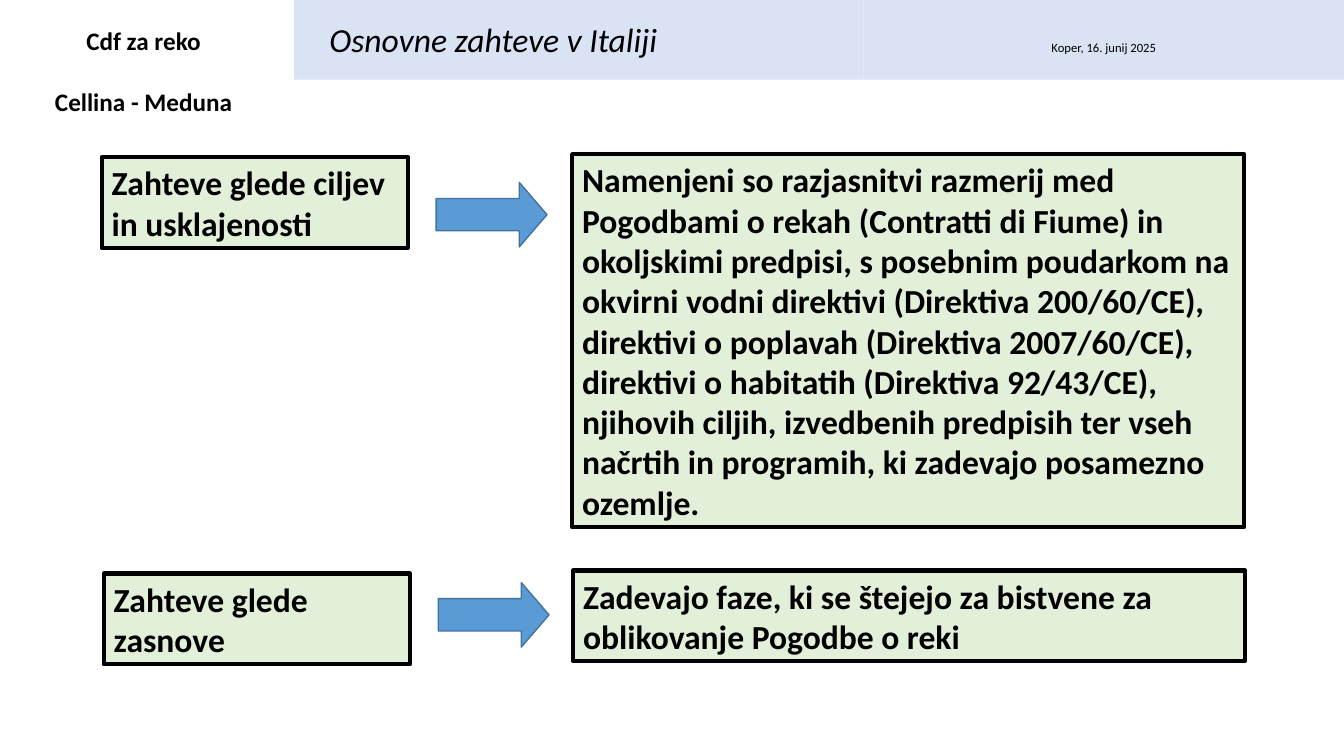
from pptx import Presentation
from pptx.dml.color import RGBColor
from pptx.enum.shapes import MSO_SHAPE
from pptx.enum.text import MSO_ANCHOR, MSO_AUTO_SIZE, PP_ALIGN
from pptx.util import Inches, Pt


def color(hex_code):
    return RGBColor.from_string(hex_code)


def add_text(paragraph, text, size, bold=False, italic=False, align=PP_ALIGN.LEFT):
    paragraph.alignment = align
    run = paragraph.add_run()
    run.text = text
    run.font.name = "Calibri"
    run.font.size = Pt(size)
    run.font.bold = bold
    run.font.italic = italic
    run.font.color.rgb = color("000000")


presentation = Presentation()
presentation.slide_width = Inches(13.34)
presentation.slide_height = Inches(7.5)
slide = presentation.slides.add_slide(presentation.slide_layouts[5])
shapes = slide.shapes

# Header band: title part and date part
for left, width, date in [(2.92, 5.65, ""), (8.57, 4.77, "Koper, 16. junij 2025")]:
    band = shapes.add_shape(MSO_SHAPE.RECTANGLE, Inches(left), 0, Inches(width), Inches(0.79))
    band.shadow.inherit = False
    band.fill.solid()
    band.fill.fore_color.rgb = color("DAE3F3")
    band.line.fill.background()
    if date:
        band.text_frame.margin_top = Inches(0.2)
        add_text(band.text_frame.paragraphs[0], date, 9, align=PP_ALIGN.CENTER)

title = shapes.title
title.left, title.top = Inches(3.17), Inches(0.14)
title.width, title.height = Inches(5.29), Inches(0.5)
title.text_frame.auto_size = MSO_AUTO_SIZE.NONE
title.text_frame.vertical_anchor = MSO_ANCHOR.BOTTOM
add_text(title.text_frame.paragraphs[0], "Osnovne zahteve v Italiji", 24, italic=True)
# Bring the title in front of the band
title.element.getparent().append(title.element)

# Requirements on the left, their explanations on the right
boxes = [
    (1.01, 1.56, 3.04, 0.9, "Zahteve glede ciljev in usklajenosti"),
    (5.68, 1.53, 6.67, 3.7,
     "Namenjeni so razjasnitvi razmerij med Pogodbami o rekah (Contratti di Fiume) "
     "in okoljskimi predpisi, s posebnim poudarkom na okvirni vodni direktivi "
     "(Direktiva 200/60/CE), direktivi o poplavah (Direktiva 2007/60/CE), "
     "direktivi o habitatih (Direktiva 92/43/CE), njihovih ciljih, izvedbenih "
     "predpisih ter vseh načrtih in programih, ki zadevajo posamezno ozemlje."),
    (1.03, 5.69, 3.04, 0.9, "Zahteve glede zasnove"),
    (5.69, 5.66, 6.67, 0.9,
     "Zadevajo faze, ki se štejejo za bistvene za oblikovanje Pogodbe o reki"),
]
for left, top, width, height, text in boxes:
    box = shapes.add_shape(MSO_SHAPE.RECTANGLE, Inches(left), Inches(top),
                           Inches(width), Inches(height))
    box.shadow.inherit = False
    box.fill.solid()
    box.fill.fore_color.rgb = color("E2F0D9")
    box.line.color.rgb = color("000000")
    box.line.width = Pt(3)
    box.text_frame.word_wrap = True
    box.text_frame.vertical_anchor = MSO_ANCHOR.TOP
    add_text(box.text_frame.paragraphs[0], text, 24, bold=True)

for left, top in [(4.33, 1.81), (4.35, 5.78)]:
    arrow = shapes.add_shape(MSO_SHAPE.RIGHT_ARROW, Inches(left), Inches(top),
                             Inches(1.1), Inches(0.64))
    arrow.adjustments[1] = 0.43
    arrow.shadow.inherit = False
    arrow.fill.solid()
    arrow.fill.fore_color.rgb = color("5B9BD5")
    arrow.line.color.rgb = color("43729D")
    arrow.line.width = Pt(1)

river_contract = shapes.add_textbox(Inches(0.42), Inches(0.2), Inches(2.01), Inches(1)).text_frame
river_contract.word_wrap = True
add_text(river_contract.paragraphs[0], "Cdf za reko", 18, bold=True, align=PP_ALIGN.CENTER)
river_names = river_contract.add_paragraph()
river_names.space_before = Pt(21.8)
add_text(river_names, "Cellina - Meduna", 18, bold=True, align=PP_ALIGN.CENTER)

presentation.save("out.pptx")
